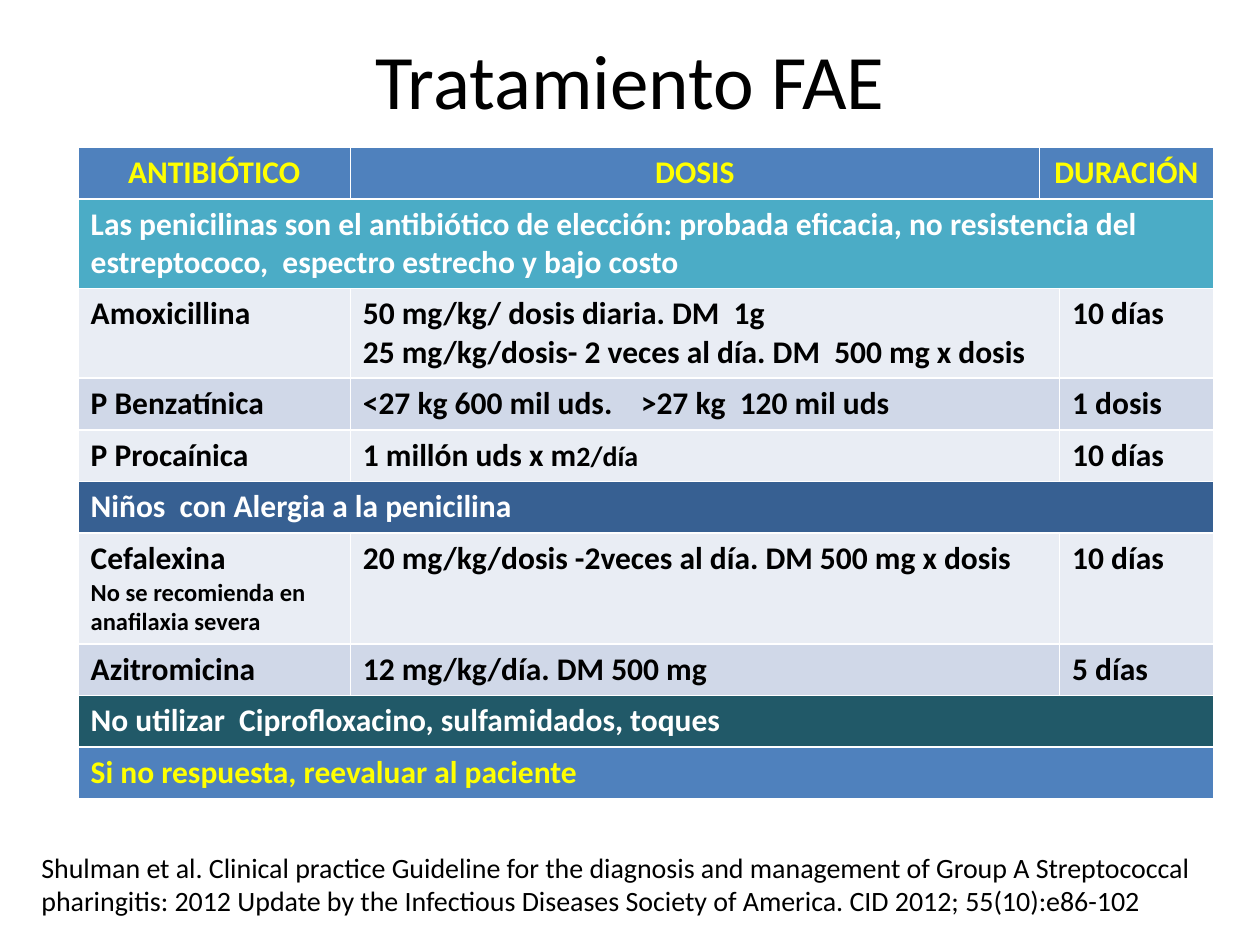
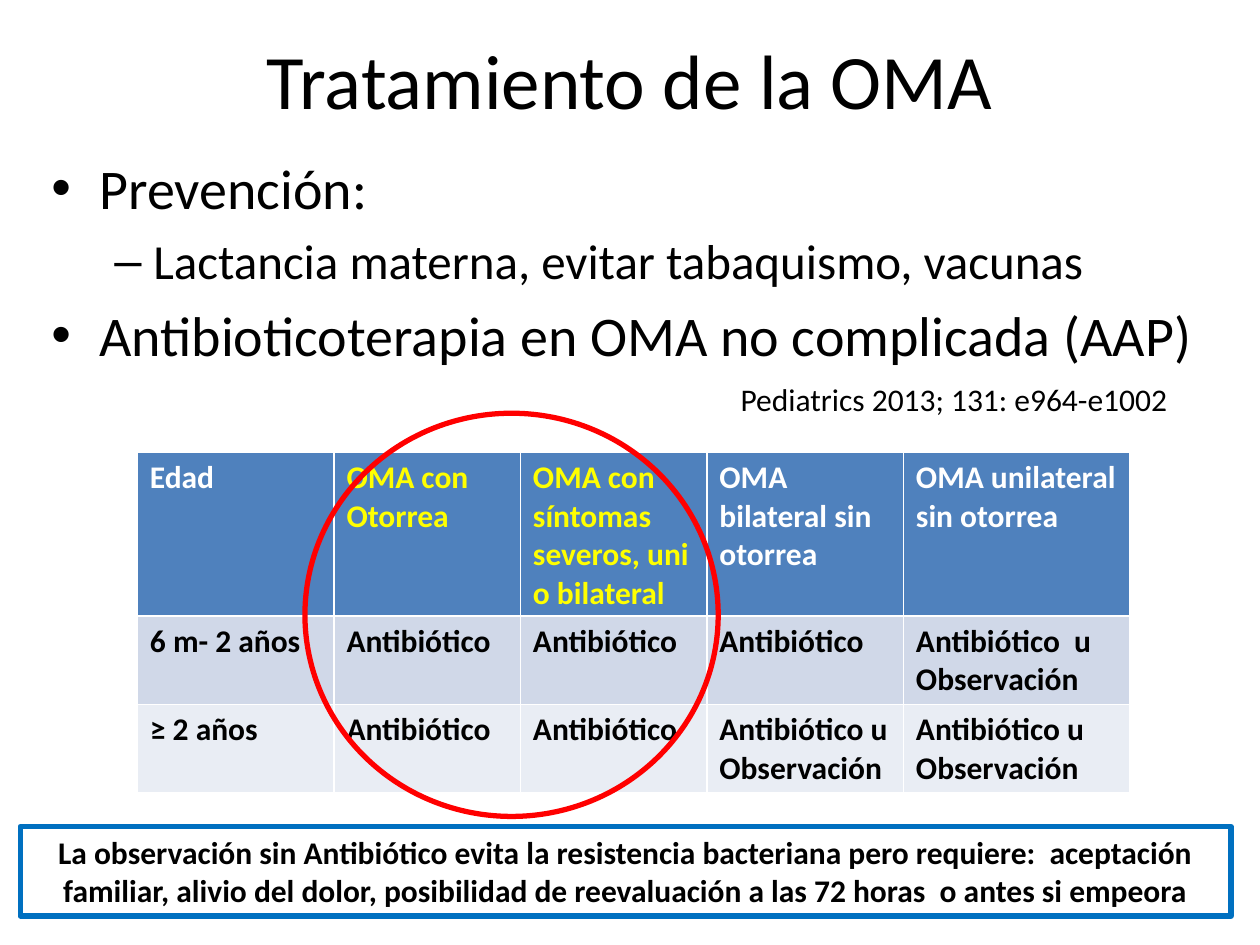
from pptx import Presentation
from pptx.dml.color import RGBColor
from pptx.enum.shapes import MSO_SHAPE as Shape
from pptx.enum.text import MSO_ANCHOR as Anchor, MSO_AUTO_SIZE as AutoSize, PP_ALIGN as Align
from pptx.oxml.ns import qn
from pptx.util import Inches, Pt
from lxml.etree import SubElement

WHITE = RGBColor(0xFF, 0xFF, 0xFF)
BLACK = RGBColor(0, 0, 0)
YELLOW = RGBColor(0xFF, 0xFF, 0)
RED = RGBColor(0xFF, 0, 0)
BLUE = RGBColor(0x4F, 0x81, 0xBD)
FRAME_BLUE = RGBColor(0, 0x70, 0xC0)
AQUA = RGBColor(0x4B, 0xAC, 0xC6)
NAVY = RGBColor(0x37, 0x60, 0x92)
TEAL = RGBColor(0x21, 0x59, 0x68)
LIGHT = RGBColor(0xE9, 0xED, 0xF4)
MID = RGBColor(0xD0, 0xD8, 0xE8)

# Bullet, size, left indent and hanging indent for each list level
LEVELS = [("•", 32, 0.38, 0.38), ("–", 28, 0.81, 0.31)]


class Deck:
    font = "Calibri"
    row_height = Inches(0.41)

    def __init__(self):
        self.prs = Presentation()
        self.prs.slide_width, self.prs.slide_height = Inches(10), Inches(7.5)
        self.slide = None

    def new_slide(self, heading):
        self.slide = self.prs.slides.add_slide(self.prs.slide_layouts[5])
        title = self.slide.shapes.title
        title.left, title.top = Inches(0.5), Inches(0)
        title.width, title.height = Inches(9), Inches(1.25)
        title.text_frame.vertical_anchor = Anchor.MIDDLE
        self.add_lines(title.text_frame, [heading], 44, align=Align.CENTER)

    def add_run(self, paragraph, text, size, color=BLACK, bold=False):
        run = paragraph.add_run()
        run.text = text
        run.font.name, run.font.size, run.font.bold = self.font, Pt(size), bold
        run.font.color.rgb = color

    def add_lines(self, frame, lines, size, color=BLACK, bold=False, align=Align.LEFT):
        """A line is a string, or a list of (text, size) runs."""
        for i, line in enumerate(lines):
            paragraph = frame.add_paragraph() if i else frame.paragraphs[0]
            paragraph.alignment = align
            for text, run_size in [(line, size)] if isinstance(line, str) else line:
                self.add_run(paragraph, text, run_size, color, bold)

    def text_box(self, left, top, width, height, text, size, wrap=True):
        box = self.slide.shapes.add_textbox(*map(Inches, (left, top, width, height)))
        box.text_frame.word_wrap = wrap
        box.text_frame.auto_size = AutoSize.SHAPE_TO_FIT_TEXT
        self.add_lines(box.text_frame, [text], size)

    def bullet_list(self, left, top, width, height, items):
        box = self.slide.shapes.add_textbox(*map(Inches, (left, top, width, height)))
        frame = box.text_frame
        frame.word_wrap = True
        for i, (level, text) in enumerate(items):
            bullet, size, indent, hanging = LEVELS[level]
            paragraph = frame.add_paragraph() if i else frame.paragraphs[0]
            paragraph.level = level
            paragraph.space_before = Pt(size * 0.2 if i else 0)
            props = paragraph._p.get_or_add_pPr()
            props.set("marL", str(Inches(indent)))
            props.set("indent", str(-Inches(hanging)))
            SubElement(props, qn("a:buFont")).set("typeface", "Arial")
            SubElement(props, qn("a:buChar")).set("char", bullet)
            self.add_run(paragraph, text, size)

    def table(self, left, top, widths, row_count):
        height = self.row_height * row_count
        table = self.slide.shapes.add_table(
            row_count, len(widths), Inches(left), Inches(top),
            Inches(sum(widths)), height).table
        table.horz_banding = False
        for column, width in zip(table.columns, widths):
            column.width = Inches(width)
        for row in table.rows:
            row.height = self.row_height
        return table

    def table_row(self, table, row, cells, fill, colors, spans=None, align=Align.LEFT):
        """Fill one row; spans gives how many columns each cell covers."""
        column = 0
        for lines, color, span in zip(cells, colors, spans or [1] * len(cells)):
            cell = table.cell(row, column)
            if span > 1:
                cell.merge(table.cell(row, column + span - 1))
            for covered in range(column, column + span):
                fill_format = table.cell(row, covered).fill
                fill_format.solid()
                fill_format.fore_color.rgb = fill
            lines = [lines] if isinstance(lines, str) else lines
            self.add_lines(cell.text_frame, lines, 18, color, True, align)
            column += span

    def outline(self, kind, left, top, width, height, color):
        shape = self.slide.shapes.add_shape(kind, *map(Inches, (left, top, width, height)))
        shape.shadow.inherit = False
        shape.fill.background()
        shape.line.color.rgb, shape.line.width = color, Pt(3)
        return shape


def build_fae(deck):
    deck.new_slide("Tratamiento FAE")

    # Each row: fill, text colour, cells
    rows = [
        (AQUA, WHITE, ["Las penicilinas son el antibiótico de elección: probada eficacia, "
                       "no resistencia del estreptococo,  espectro estrecho y bajo costo"]),
        (LIGHT, BLACK, ["Amoxicillina",
                        ["50 mg/kg/ dosis diaria. DM  1g",
                         "25 mg/kg/dosis- 2 veces al día. DM  500 mg x dosis"], "10 días"]),
        (MID, BLACK, ["P Benzatínica", "<27 kg 600 mil uds.    >27 kg  120 mil uds", "1 dosis"]),
        (LIGHT, BLACK, ["P Procaínica", [[("1 millón uds x m", 18), ("2/día", 16)]], "10 días"]),
        (NAVY, WHITE, ["Niños  con Alergia a la penicilina"]),
        (LIGHT, BLACK, [["Cefalexina", [("No se recomienda en anafilaxia severa", 14)]],
                        "20 mg/kg/dosis -2veces al día. DM 500 mg x dosis", "10 días"]),
        (MID, BLACK, ["Azitromicina", "12 mg/kg/día. DM 500 mg", "5 días"]),
        (TEAL, WHITE, ["No utilizar  Ciprofloxacino, sulfamidados, toques"]),
        (BLUE, YELLOW, ["Si no respuesta, reevaluar al paciente"]),
    ]
    doses = deck.table(0.62, 1.17, [2.16, 5.47, 0.16, 1.22], len(rows) + 1)
    deck.table_row(doses, 0, ["ANTIBIÓTICO", "DOSIS", "DURACIÓN"], BLUE,
                   [YELLOW] * 3, [1, 1, 2], Align.CENTER)
    for number, (fill, color, cells) in enumerate(rows, 1):
        spans = [4] if len(cells) == 1 else [1, 2, 1]
        deck.table_row(doses, number, cells, fill, [color] * len(cells), spans)

    # Reference
    deck.text_box(0.23, 6.7, 9.61, 0.64,
                  "Shulman et al. Clinical practice Guideline for the diagnosis and management "
                  "of Group A Streptococcal pharingitis: 2012 Update by the Infectious Diseases "
                  "Society of America. CID 2012; 55(10):e86-102", 16)


def build_oma(deck):
    deck.new_slide("Tratamiento de la OMA")
    deck.bullet_list(0.31, 1.17, 9.27, 5.55, [
        (0, "Prevención:"),
        (1, "Lactancia materna, evitar tabaquismo, vacunas"),
        (0, "Antibioticoterapia en OMA no complicada (AAP)"),
    ])

    # Treatment by age
    ages = deck.table(1.09, 3.59, [1.56, 1.48, 1.48, 1.56, 1.8], 3)
    deck.table_row(ages, 0, ["Edad", "OMA con Otorrea",
                             "OMA con síntomas severos, uni o bilateral",
                             "OMA bilateral sin otorrea", "OMA unilateral sin otorrea"],
                   BLUE, [WHITE, YELLOW, YELLOW, WHITE, WHITE])
    deck.table_row(ages, 1, ["6 m- 2 años"] + ["Antibiótico"] * 3
                   + ["Antibiótico  u Observación"], MID, [BLACK] * 5)
    deck.table_row(ages, 2, ["≥ 2 años"] + ["Antibiótico"] * 2
                   + ["Antibiótico u Observación"] * 2, LIGHT, [BLACK] * 5)

    # Highlight, conclusion and reference
    deck.outline(Shape.OVAL, 2.42, 3.28, 3.28, 3.2, RED)
    conclusion = deck.outline(Shape.RECTANGLE, 0.16, 6.56, 9.61, 0.71, FRAME_BLUE).text_frame
    conclusion.word_wrap = True
    conclusion.vertical_anchor = Anchor.TOP
    conclusion.auto_size = AutoSize.SHAPE_TO_FIT_TEXT
    deck.add_lines(conclusion, ["La observación sin Antibiótico evita la resistencia bacteriana "
                                "pero requiere:  aceptación familiar, alivio del dolor, "
                                "posibilidad de reevaluación a las 72 horas  o antes si empeora"],
                   18, bold=True, align=Align.CENTER)
    deck.text_box(5.78, 2.97, 3.63, 0.4, "Pediatrics 2013; 131: e964-e1002", 18, wrap=False)


def main():
    deck = Deck()
    build_fae(deck)
    build_oma(deck)
    deck.prs.save("out.pptx")


if __name__ == "__main__":
    main()
